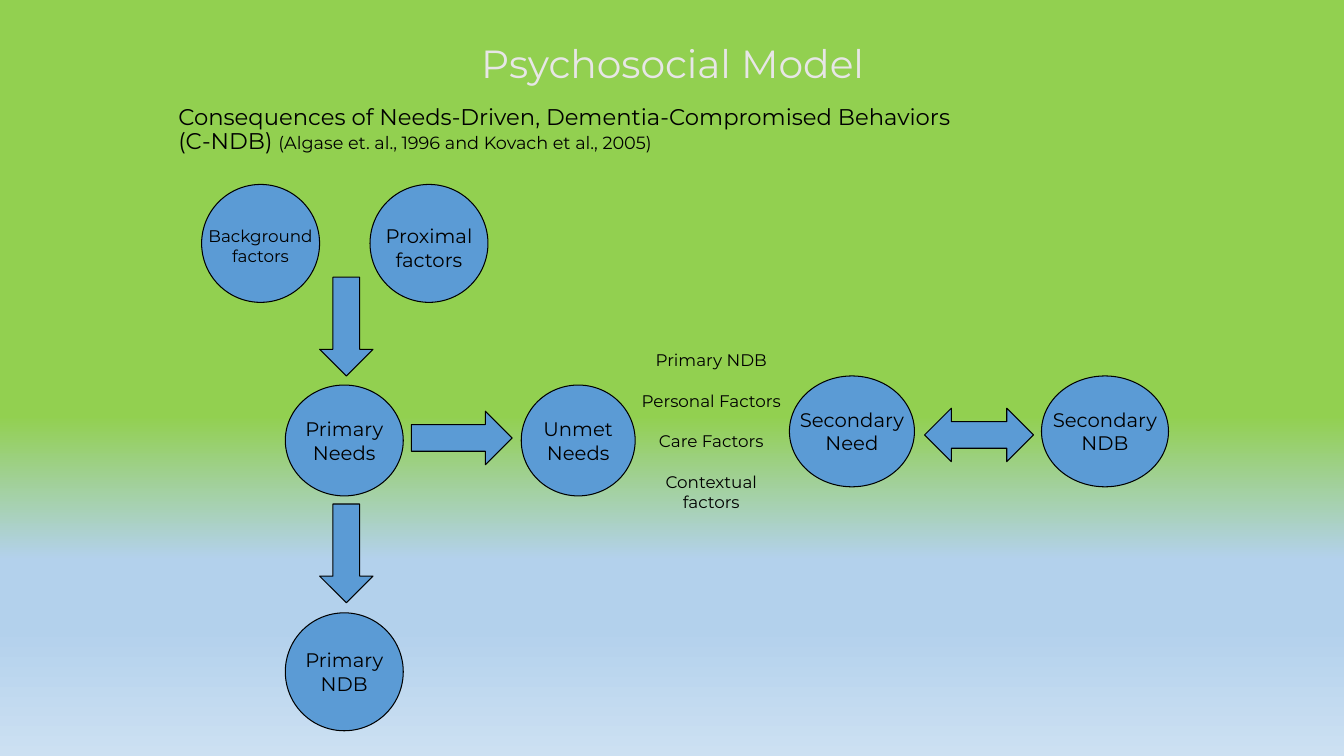
from copy import deepcopy

from pptx import Presentation
from pptx.dml.color import RGBColor
from pptx.enum.shapes import MSO_SHAPE as Shape
from pptx.enum.text import MSO_ANCHOR as Anchor, PP_ALIGN as Align
from pptx.oxml.ns import qn
from pptx.util import Inches, Pt

FONT = "Montserrat"
BLACK, BLUE, PALE = "000000", "5B9BD5", "E7E6E6"
BACKGROUND_STOPS = [(0, "92D050"), (55, "92D050"), (74, "B3D1EC"), (83, "B3D1EC"), (100, "CCE0F2")]
CIRCLES = [
    ("Background\vfactors", 12, (2, 1.83, 1.17, 1.17), 0.05),
    ("Proximal\vfactors", 14, (3.67, 1.83, 1.17, 1.17), 0.08),
    ("Primary\vNeeds", 14, (2.83, 3.82, 1.17, 1.1), 0),
    ("Primary\vNDB", 14, (2.83, 6.08, 1.17, 1.17), 0),
    ("Unmet\vNeeds", 14, (5.17, 3.82, 1.13, 1.1), 0),
    ("Secondary\vNeed", 14, (7.83, 3.73, 1.24, 1.1), 0),
    ("Secondary\vNDB", 14, (10.33, 3.73, 1.26, 1.1), 0),
]
ARROWS = [
    (Shape.DOWN_ARROW, (3.17, 2.75, 0.53, 0.98)),
    (Shape.DOWN_ARROW, (3.17, 5, 0.53, 0.98)),
    (Shape.RIGHT_ARROW, (4.08, 4.08, 1, 0.53)),
    (Shape.LEFT_RIGHT_ARROW, (9.17, 4.05, 1.08, 0.53)),
]
FACTORS = ["Primary NDB", "Personal Factors", "Care Factors", "Contextual\vfactors"]


def color(value):
    """Return the colour for a hex string."""
    return RGBColor.from_string(value)


def set_format(target, values):
    """Set each attribute of the target from a dict."""
    for name, value in values.items():
        setattr(target, name, value)


def format_runs(paragraph, size, fill=BLACK):
    """Give every run of a paragraph its font, size and colour."""
    for run in paragraph.runs:
        set_format(run.font, {"name": FONT, "size": Pt(size)})
        run.font.color.rgb = color(fill)


def paint_background(slide):
    """Fill the background with a gradient that runs downwards."""
    fill = slide.background.fill
    fill.gradient()
    fill.gradient_angle = 270
    stop_list = slide.element.find(".//" + qn("a:gsLst"))
    for _ in range(len(BACKGROUND_STOPS) - len(stop_list)):
        stop_list.append(deepcopy(stop_list[0]))
    for stop, (position, value) in zip(fill.gradient_stops, BACKGROUND_STOPS):
        stop.color.rgb = color(value)
        stop.position = position / 100


def add_text_box(slide, box, **values):
    """Add a wrapping text box and return its text frame."""
    frame = slide.shapes.add_textbox(*map(Inches, box)).text_frame
    set_format(frame, {"word_wrap": True, **values})
    return frame


def add_title(slide, box):
    """Place the slide title in the middle of its box."""
    paragraph = add_text_box(slide, box, vertical_anchor=Anchor.MIDDLE).paragraphs[0]
    set_format(paragraph, {"text": "Psychosocial Model", "alignment": Align.CENTER})
    format_runs(paragraph, 28, PALE)


def add_heading(slide, box):
    """Place the name of the model and its citation."""
    paragraph = add_text_box(slide, box).paragraphs[0]
    set_format(paragraph, {
        "text": "Consequences of Needs-Driven, Dementia-Compromised Behaviors\v(C-NDB) ",
        "line_spacing": 0.9,
    })
    citation = paragraph.add_run()
    citation.text = "(Algase et. al., 1996 and Kovach et al., 2005)"
    format_runs(paragraph, 16.2)
    citation.font.size = Pt(12.6)


def add_blue_shape(slide, kind, box):
    """Add a blue shape with a thin black outline."""
    shape = slide.shapes.add_shape(kind, *map(Inches, box))
    shape.shadow.inherit = False
    shape.fill.solid()
    shape.fill.fore_color.rgb = color(BLUE)
    shape.line.color.rgb = color(BLACK)
    shape.line.width = Pt(0.75)
    return shape


def add_circle(slide, label, size, box, top):
    """Add a circle with a centred label, lowered by its top margin."""
    frame = add_blue_shape(slide, Shape.OVAL, box).text_frame
    set_format(frame, {
        "word_wrap": False, "vertical_anchor": Anchor.MIDDLE,
        "margin_left": 0, "margin_right": 0,
        "margin_top": Inches(top), "margin_bottom": 0,
    })
    paragraph = frame.paragraphs[0]
    set_format(paragraph, {"text": label, "alignment": Align.CENTER})
    format_runs(paragraph, size)


def add_factors(slide, box):
    """List the factors between the unmet and the secondary needs."""
    frame = add_text_box(slide, box)
    for index, factor in enumerate(FACTORS):
        paragraph = frame.add_paragraph() if index else frame.paragraphs[0]
        set_format(paragraph, {
            "text": factor, "alignment": Align.CENTER,
            "space_before": Pt(14.6 if index else 0),
        })
        format_runs(paragraph, 12)


def main():
    """Build the slide and save it."""
    presentation = Presentation()
    set_format(presentation, {"slide_width": Inches(13.33), "slide_height": Inches(7.5)})
    slide = presentation.slides.add_slide(presentation.slide_layouts[6])
    paint_background(slide)
    add_heading(slide, (1.67, 1, 10, 0.83))
    for circle in CIRCLES:
        add_circle(slide, *circle)
    for kind, box in ARROWS:
        add_blue_shape(slide, kind, box)
    add_factors(slide, (6.17, 3.42, 1.77, 1.72))
    add_title(slide, (1.67, 0, 10, 1.25))
    presentation.save("out.pptx")


if __name__ == "__main__":
    main()
